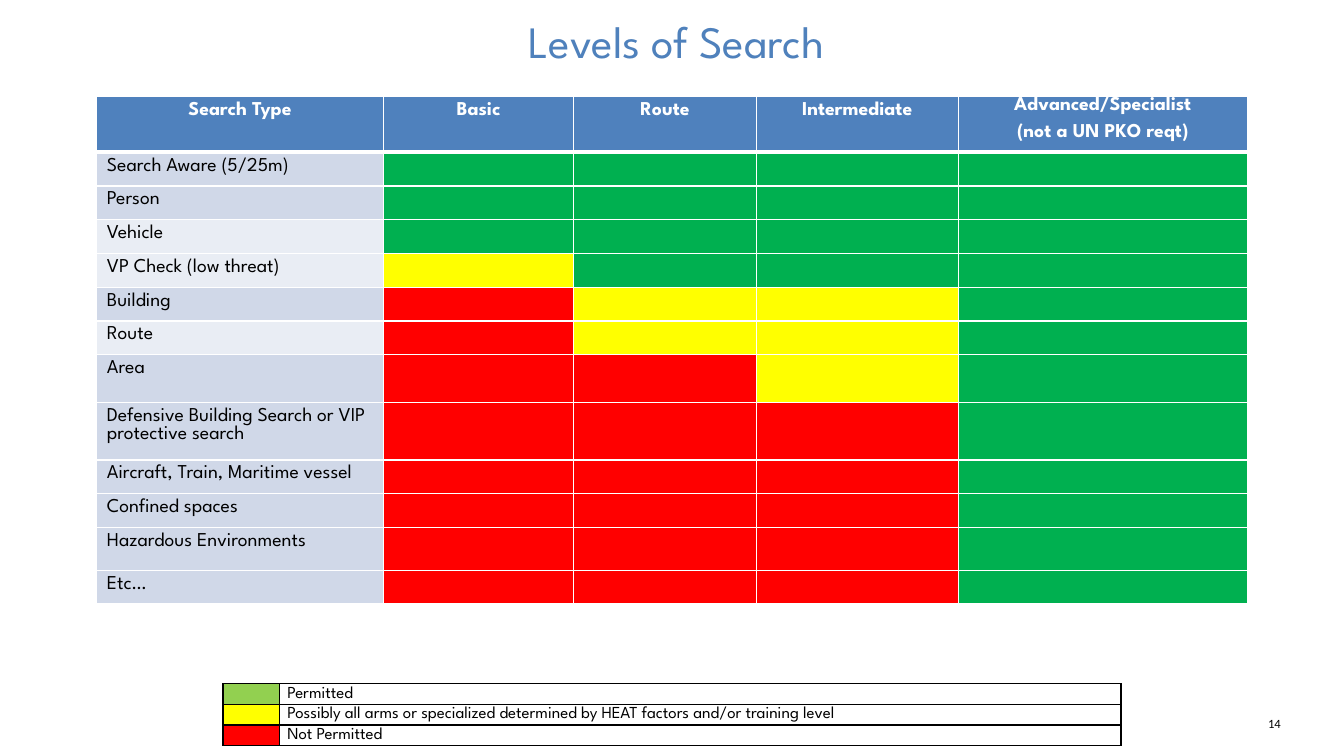
from dataclasses import dataclass

from lxml import etree
from pptx import Presentation
from pptx.dml.color import RGBColor
from pptx.enum import text
from pptx.oxml import ns
from pptx.util import Cm, Pt


@dataclass(frozen=True)
class Theme:
    font: str = "League Spartan"
    number_font: str = "Calibri"
    title: str = "4F81BC"
    header: str = "4F81BD"
    band: str = "D0D8E8"
    light_band: str = "E9EDF4"
    permitted: str = "00B050"
    possible: str = "FFFF00"
    forbidden: str = "FF0000"
    legend_green: str = "92D050"
    white: str = "FFFFFF"
    black: str = "000000"
    title_size: int = 32
    table_size: int = 14
    legend_size: int = 12
    number_size: int = 9


theme = Theme()


def write(tf, content, size, color, align, font=theme.font, bold=False, after=0):
    tf.text = content
    for p in tf.paragraphs:
        p.alignment = align
        p.space_after = Pt(after)
        for r in p.runs:
            r.font.name, r.font.size, r.font.bold = font, Pt(size), bold
            r.font.color.rgb = RGBColor.from_string(color)
        if not p.runs:
            etree.SubElement(p._p, ns.qn("a:endParaRPr"), sz=str(size * 100))


def paint(cell, fill, line, top=1, bottom=1):
    tcPr = cell._tc.get_or_add_tcPr()
    for side, width in (("L", 1), ("R", 1), ("T", top), ("B", bottom)):
        ln = etree.SubElement(tcPr, ns.qn(f"a:ln{side}"), w=str(Pt(width)))
        solid = etree.SubElement(ln, ns.qn("a:solidFill"))
        etree.SubElement(solid, ns.qn("a:srgbClr"), val=line)
    cell.fill.solid()
    cell.fill.fore_color.rgb = RGBColor.from_string(fill)


prs = Presentation()
prs.slide_width, prs.slide_height = Cm(33.87), Cm(19.05)
s = prs.slides.add_slide(prs.slide_layouts[6])
left, center, right = text.PP_ALIGN.LEFT, text.PP_ALIGN.CENTER, text.PP_ALIGN.RIGHT

# Title and slide number
labels = [
    ("Levels of Search", (7.9, 0.2, 18.3, 1.63), theme.title_size, theme.title,
     center, theme.font, text.MSO_ANCHOR.BOTTOM),
    ("14", (30.68, 17.9, 1.85, 0.64), theme.number_size, theme.black,
     right, theme.number_font, text.MSO_ANCHOR.MIDDLE),
]
for content, box, size, color, align, font, anchor in labels:
    tf = s.shapes.add_textbox(*map(Cm, box)).text_frame
    tf.word_wrap = True
    tf.vertical_anchor = anchor
    write(tf, content, size, color, align, font)

# Search levels: G permitted, Y possible, R not permitted
headings = ["Search Type", "Basic", "Route", "Intermediate",
            "Advanced/Specialist\n(not a UN PKO reqt)"]
levels = {"G": theme.permitted, "Y": theme.possible, "R": theme.forbidden}
searches = [
    ("Search Aware (5/25m)", "GGGG", 0.85),
    ("Person", "GGGG", 0.85),
    ("Vehicle", "GGGG", 0.85),
    ("VP Check (low threat)", "YGGG", 0.85),
    ("Building", "RYYG", 0.85),
    ("Route", "RYYG", 0.85),
    ("Area", "RRYG", 1.21),
    ("Defensive Building Search or VIP protective search", "RRRG", 1.43),
    ("Aircraft, Train, Maritime vessel", "RRRG", 0.85),
    ("Confined spaces", "RRRG", 0.85),
    ("Hazardous Environments", "RRRG", 1.08),
    ("Etc…", "RRRG", 0.85),
]
light_rows = {"Vehicle", "VP Check (low threat)", "Route"}
widths = [7.22, 4.8, 4.6, 5.09, 7.29]
heights = [1.39] + [height for _, _, height in searches]
table = s.shapes.add_table(len(heights), len(widths), Cm(2.44), Cm(2.44),
                           Cm(sum(widths)), Cm(sum(heights))).table
for column, width in zip(table.columns, widths):
    column.width = Cm(width)
for row, height in zip(table.rows, heights):
    row.height = Cm(height)

for col, heading in enumerate(headings):
    cell = table.cell(0, col)
    write(cell.text_frame, heading, theme.table_size, theme.white, center,
          bold=True, after=6)
    paint(cell, theme.header, theme.white, bottom=3)
cell.margin_left = cell.margin_right = cell.margin_top = cell.margin_bottom = 0

for row, (name, codes, _) in enumerate(searches, 1):
    band = theme.light_band if name in light_rows else theme.band
    fills = [band] + [levels[code] for code in codes]
    for col, fill in enumerate(fills):
        cell = table.cell(row, col)
        write(cell.text_frame, "" if col else name, theme.table_size,
              theme.black, left, after=6)
        paint(cell, fill, theme.white, top=3 if row == 1 else 1)

# Legend
legend = [
    (theme.legend_green, "Permitted"),
    (theme.possible, "Possibly all arms or specialized determined by HEAT factors "
                     "and/or training level"),
    (theme.forbidden, "Not Permitted"),
]
key_width, label_width, row_height = 1.43, 21.2, 0.52
table = s.shapes.add_table(len(legend), 2, Cm(5.62), Cm(17.23),
                           Cm(key_width + label_width),
                           Cm(row_height * len(legend))).table
table.columns[0].width, table.columns[1].width = Cm(key_width), Cm(label_width)
for row, (color, meaning) in enumerate(legend):
    table.rows[row].height = Cm(row_height)
    for col, (fill, content) in enumerate([(color, ""), (theme.white, meaning)]):
        cell = table.cell(row, col)
        cell.margin_left = cell.margin_right = Cm(0.19)
        cell.margin_top = cell.margin_bottom = 0
        cell.vertical_anchor = text.MSO_ANCHOR.MIDDLE
        write(cell.text_frame, content, theme.legend_size, theme.black, left, after=6)
        paint(cell, fill, theme.black)

prs.save("out.pptx")
